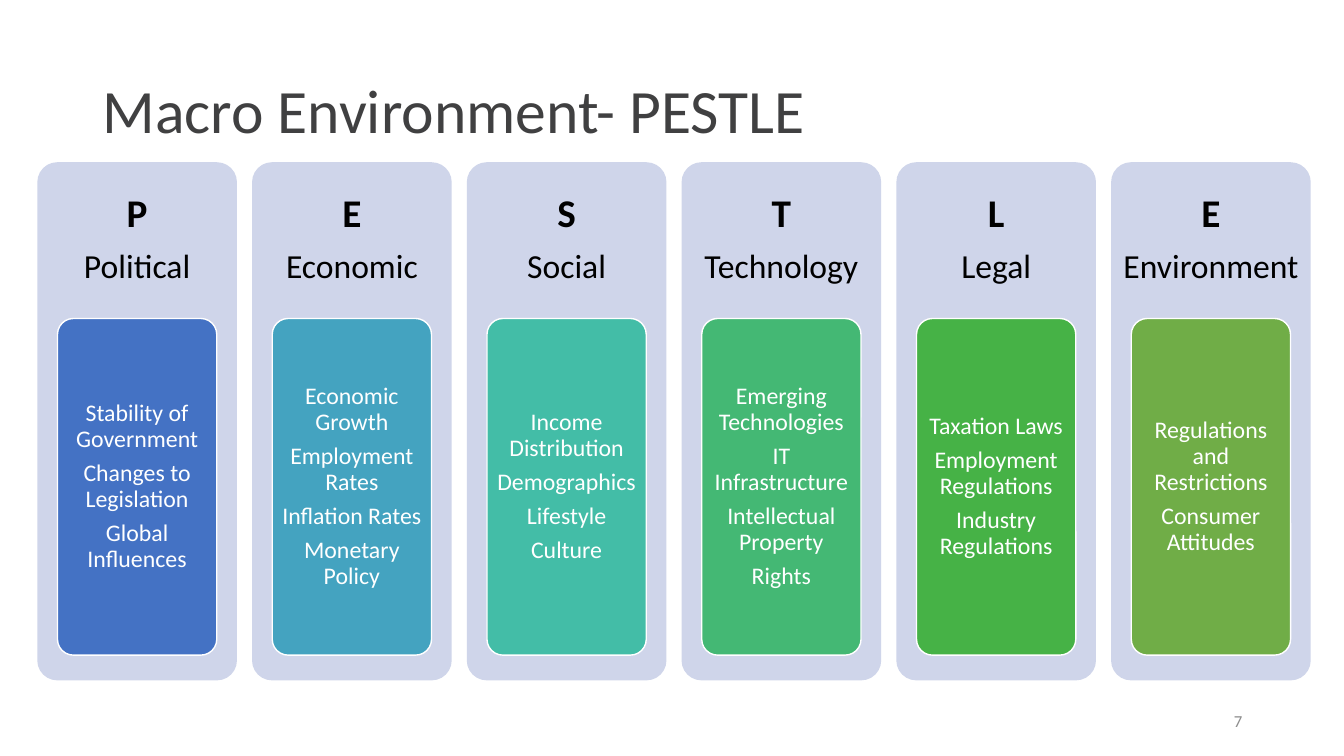
"""Build the PESTLE macro environment slide."""
from dataclasses import dataclass

from pptx import Presentation
from pptx import util as u
from pptx.dml.color import RGBColor
from pptx.enum import shapes, text

EMU_PER_PX = 9144


@dataclass(frozen=True)
class Theme:
    font: str = "Calibri"
    title: str = "404041"
    header: str = "000000"
    panel: str = "CFD5EA"
    white: str = "FFFFFF"
    number: str = "8C8C8C"
    title_size: int = 44
    letter_size: int = 28
    name_size: int = 24
    factor_size: int = 17
    number_size: int = 12
    line_spacing: float = 0.9
    space_after: float = 0.35
    rounding: float = 0.1


@dataclass(frozen=True)
class Box:
    left: int
    top: int
    width: int
    height: int


@dataclass(frozen=True)
class Line:
    words: str
    size: int
    bold: bool = False


@dataclass(frozen=True)
class Column:
    letter: str
    name: str
    colour: str
    factors: tuple[str, ...]


THEME = Theme()
PITCH = 213
PANEL = Box(37, 161, 198, 514)
HEADER = Box(37, 161, 198, 154)
CARD = Box(57, 316, 158, 334)
COLUMNS = (
    Column("P", "Political", "4472C4",
           ("Stability of Government", "Changes to Legislation", "Global Influences")),
    Column("E", "Economic", "44A3C0",
           ("Economic Growth", "Employment Rates", "Inflation Rates", "Monetary Policy")),
    Column("S", "Social", "43BDA7",
           ("Income Distribution", "Demographics", "Lifestyle", "Culture")),
    Column("T", "Technology", "44B874",
           ("Emerging Technologies", "IT Infrastructure", "Intellectual Property", "Rights")),
    Column("L", "Legal", "46B246",
           ("Taxation Laws", "Employment Regulations", "Industry Regulations")),
    Column("E", "Environment", "70AD47",
           ("Regulations and Restrictions", "Consumer Attitudes")),
)


def px(length: int) -> u.Emu:
    return u.Emu(length * EMU_PER_PX)


def place(box: Box, shift: int = 0) -> tuple[u.Emu, ...]:
    return px(box.left + shift), px(box.top), px(box.width), px(box.height)


def write(frame, lines: list[Line], colour: str, align, inset_x: int = 10,
          inset_y: int = 5, spacing: float = THEME.line_spacing,
          after: float = 0) -> None:
    frame.word_wrap = True
    frame.vertical_anchor = text.MSO_ANCHOR.MIDDLE
    frame.margin_left = frame.margin_right = px(inset_x)
    frame.margin_top = frame.margin_bottom = px(inset_y)
    frame.text = "\n".join(line.words for line in lines)
    for para, line in zip(frame.paragraphs, lines):
        para.alignment = align
        para.line_spacing = spacing
        para.space_after = u.Pt(line.size * after)
        for span in para.runs:
            span.font.name = THEME.font
            span.font.size = u.Pt(line.size)
            span.font.bold = line.bold
            span.font.color.rgb = RGBColor.from_string(colour)


def add_rounded(page, box: Box, shift: int, fill: str):
    shape = page.shapes.add_shape(shapes.MSO_SHAPE.ROUNDED_RECTANGLE, *place(box, shift))
    shape.adjustments[0] = THEME.rounding
    shape.shadow.inherit = False
    shape.fill.solid()
    shape.fill.fore_color.rgb = RGBColor.from_string(fill)
    shape.line.fill.background()
    return shape


def add_column(page, column: Column, shift: int) -> None:
    add_rounded(page, PANEL, shift, THEME.panel)
    header = page.shapes.add_textbox(*place(HEADER, shift))
    heading = [Line(column.letter, THEME.letter_size, True),
               Line(column.name, THEME.name_size)]
    write(header.text_frame, heading, THEME.header, text.PP_ALIGN.CENTER, 11, 12,
          after=THEME.space_after)
    card = add_rounded(page, CARD, shift, column.colour)
    card.line.color.rgb = RGBColor.from_string(THEME.white)
    card.line.width = u.Pt(1)
    factors = [Line(factor, THEME.factor_size) for factor in column.factors]
    write(card.text_frame, factors, THEME.white, text.PP_ALIGN.CENTER, 5, 4,
          after=THEME.space_after)


def main() -> None:
    deck = Presentation()
    deck.slide_width, deck.slide_height = u.Inches(13.33), u.Inches(7.5)
    page = deck.slides.add_slide(deck.slide_layouts[6])
    title = page.shapes.add_textbox(*place(Box(92, 40, 1150, 145)))
    write(title.text_frame, [Line("Macro Environment- PESTLE", THEME.title_size)],
          THEME.title, text.PP_ALIGN.LEFT)
    for index, column in enumerate(COLUMNS):
        add_column(page, column, index * PITCH)
    number = page.shapes.add_textbox(*place(Box(942, 695, 300, 40)))
    write(number.text_frame, [Line("7", THEME.number_size)], THEME.number,
          text.PP_ALIGN.RIGHT, spacing=1.0)
    deck.save("out.pptx")


if __name__ == "__main__":
    main()
